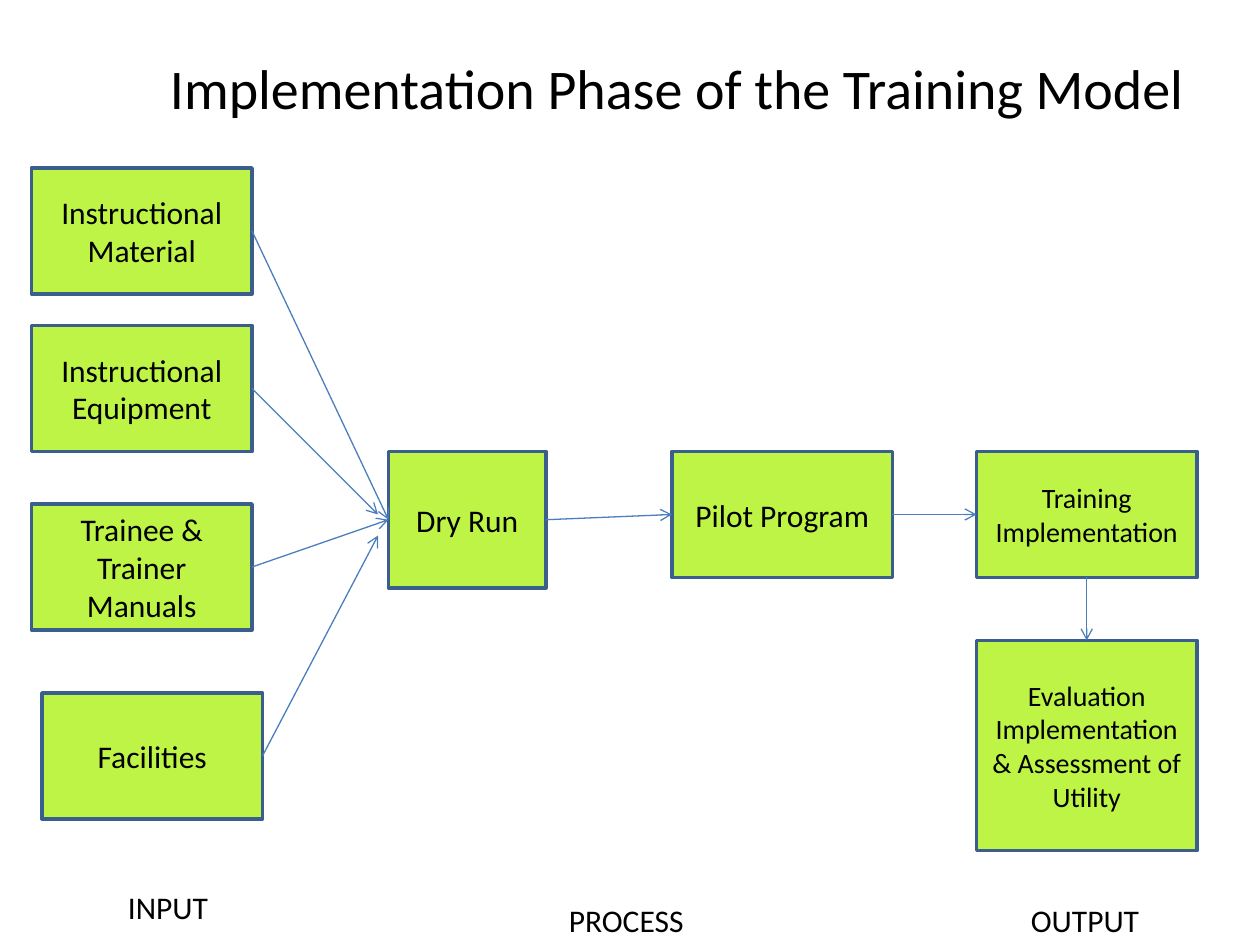
from lxml import etree
from pptx import Presentation
from pptx.dml.color import RGBColor
from pptx.enum.shapes import MSO_CONNECTOR, MSO_SHAPE
from pptx.enum.text import MSO_ANCHOR, PP_ALIGN
from pptx.oxml.ns import qn
from pptx.util import Pt

PX = 9525
COLORS = {"box": "BEF446", "border": "3A5F8C", "arrow": "4B7EBC", "text": "000000"}


def rgb(name):
    return RGBColor.from_string(COLORS[name])


def set_text(sp, text, size, align, anchor):
    tf = sp.text_frame
    tf.word_wrap = True
    tf.vertical_anchor = anchor
    p = tf.paragraphs[0]
    p.text = text
    p.alignment = align
    p.font.name = "Calibri"
    p.font.size = Pt(size)
    p.font.color.rgb = rgb("text")


prs = Presentation()
prs.slide_width, prs.slide_height = 960 * PX, 720 * PX
s = prs.slides.add_slide(prs.slide_layouts[6])

title = s.shapes.add_textbox(48 * PX, 29 * PX, 864 * PX, 75 * PX)
set_text(title, "Implementation Phase of the Training Model", 32,
         PP_ALIGN.RIGHT, MSO_ANCHOR.MIDDLE)

boxes = [
    ("Instructional Material", 24, 128, 168, 96, 18),
    ("Instructional Equipment", 24, 248, 168, 96, 18),
    ("Trainee & Trainer Manuals", 24, 384, 168, 96, 18),
    ("Facilities", 32, 528, 168, 96, 18),
    ("Dry Run", 296, 344, 120, 104, 18),
    ("Pilot Program", 512, 344, 168, 96, 18),
    ("Training Implementation", 744, 344, 168, 96, 16),
    ("Evaluation Implementation & Assessment of Utility", 744, 488, 168, 160, 16),
]
for text, x, y, w, h, size in boxes:
    sp = s.shapes.add_shape(MSO_SHAPE.RECTANGLE, x * PX, y * PX, w * PX, h * PX)
    sp.shadow.inherit = False
    sp.fill.solid()
    sp.fill.fore_color.rgb = rgb("box")
    sp.line.color.rgb = rgb("border")
    sp.line.width = Pt(2)
    set_text(sp, text, size, PP_ALIGN.CENTER, MSO_ANCHOR.MIDDLE)

for text, x, y in [("INPUT", 88, 672), ("PROCESS", 424, 682), ("OUTPUT", 776, 682)]:
    label = s.shapes.add_textbox(x * PX, y * PX, 112 * PX, 38 * PX)
    set_text(label, text, 18, PP_ALIGN.LEFT, MSO_ANCHOR.TOP)

arrows = [
    (192, 176, 296, 396),
    (192, 296, 288, 392),
    (192, 432, 296, 396),
    (200, 576, 288, 408),
    (416, 396, 512, 392),
    (680, 392, 744, 392),
    (828, 440, 828, 488),
]
for points in arrows:
    line = s.shapes.add_connector(MSO_CONNECTOR.STRAIGHT, *[v * PX for v in points])
    line.line.color.rgb = rgb("arrow")
    line.line.width = Pt(0.75)
    etree.SubElement(line.line._get_or_add_ln(), qn("a:tailEnd"), type="arrow")
    etree.SubElement(line._element.spPr, qn("a:effectLst"))

prs.save("out.pptx")
